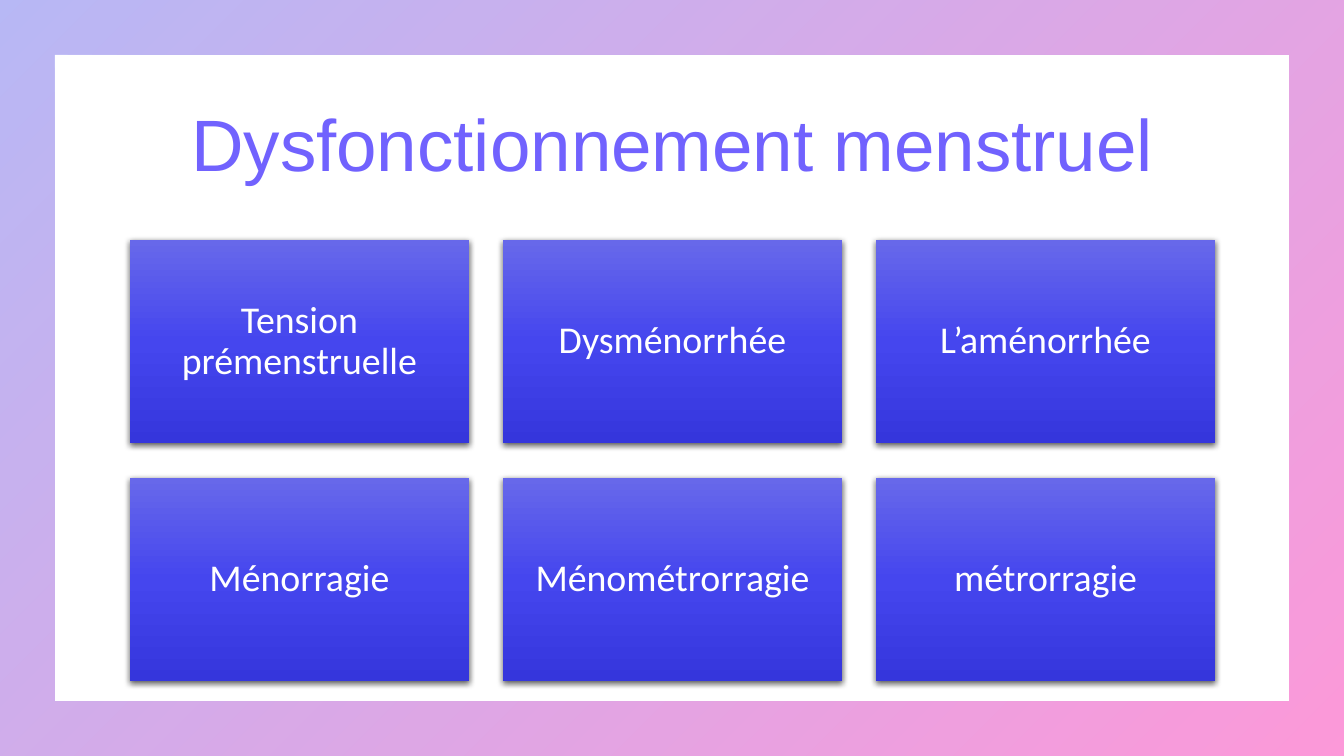
from pptx import Presentation
from pptx.dml.color import RGBColor as RGB
from pptx.enum.shapes import MSO_SHAPE as Kind
from pptx.enum.text import MSO_ANCHOR as Anchor, PP_ALIGN as Align
from pptx.oxml import parse_xml
from pptx.oxml.ns import nsdecls, qn
from pptx.util import Inches, Pt

COLORS = {
    "title": "7162FE", "text": "FFFFFF", "shade": "000000",
    "violet": "4D4EE6", "pink": "F900A0",
    "light": "6768EA", "mid": "4546EE", "dark": "3536DC",
}


def paint(shape, stops, angle, alpha=100):
    """Give a shape a linear gradient, no outline and no shadow."""
    shape.fill.background()
    shape.line.fill.background()
    shape.shadow.inherit = False
    marks = "".join(
        f'<a:gs pos="{pos * 1000}"><a:srgbClr val="{COLORS[name]}">'
        f'<a:alpha val="{alpha * 1000}"/></a:srgbClr></a:gs>'
        for pos, name in stops)
    props = shape._element.spPr
    props.replace(props.find(qn("a:noFill")), parse_xml(
        f'<a:gradFill {nsdecls("a")} rotWithShape="1"><a:gsLst>{marks}</a:gsLst>'
        f'<a:lin ang="{angle * 60000}" scaled="0"/></a:gradFill>'))


def write(shape, text, font, size, color):
    """Set one centred paragraph in the middle of a shape."""
    frame = shape.text_frame
    frame.word_wrap = True
    frame.vertical_anchor = Anchor.MIDDLE
    para = frame.paragraphs[0]
    para.text = text
    para.alignment = Align.CENTER
    para.line_spacing = 0.9
    para.font.name = font
    para.font.size = Pt(size)
    para.font.color.rgb = RGB.from_string(COLORS[color])
    return frame


deck = Presentation()
deck.slide_width, deck.slide_height = Inches(13.33), Inches(7.5)
slide = deck.slides.add_slide(deck.slide_layouts[6])
shapes = slide.shapes

# Border frame
border = shapes.add_shape(Kind.FRAME, 0, 0, deck.slide_width, deck.slide_height)
border.adjustments[0] = 0.072
paint(border, [(0, "violet"), (100, "pink")], 45, alpha=40)

# Title
title = shapes.add_textbox(Inches(0.92), Inches(0.74), Inches(11.5), Inches(1.45))
write(title, "Dysfonctionnement menstruel", "Arial", 52, "title")

# Grid of disorders
LABELS = ["Tension prémenstruelle", "Dysménorrhée", "L’aménorrhée",
          "Ménorragie", "Ménométrorragie", "métrorragie"]
WIDTH, HEIGHT, GAP = 3.36, 2.02, 0.34
for i, label in enumerate(LABELS):
    row, col = divmod(i, 3)
    card = shapes.add_shape(
        Kind.RECTANGLE,
        Inches(1.29 + col * (WIDTH + GAP)), Inches(2.38 + row * (HEIGHT + GAP)),
        Inches(WIDTH), Inches(HEIGHT))
    paint(card, [(0, "light"), (50, "mid"), (100, "dark")], 90)
    card._element.spPr.find(qn("a:effectLst")).append(parse_xml(
        f'<a:outerShdw {nsdecls("a")} blurRad="{Pt(4.5)}" dist="{Pt(1.5)}" '
        f'dir="5400000" algn="ctr" rotWithShape="0">'
        f'<a:srgbClr val="{COLORS["shade"]}"><a:alpha val="63000"/></a:srgbClr>'
        f'</a:outerShdw>'))
    frame = write(card, label, "Calibri", 27, "text")
    frame.margin_left = frame.margin_right = Inches(0.11)
    frame.margin_top = frame.margin_bottom = Inches(0.11)

deck.save("out.pptx")
